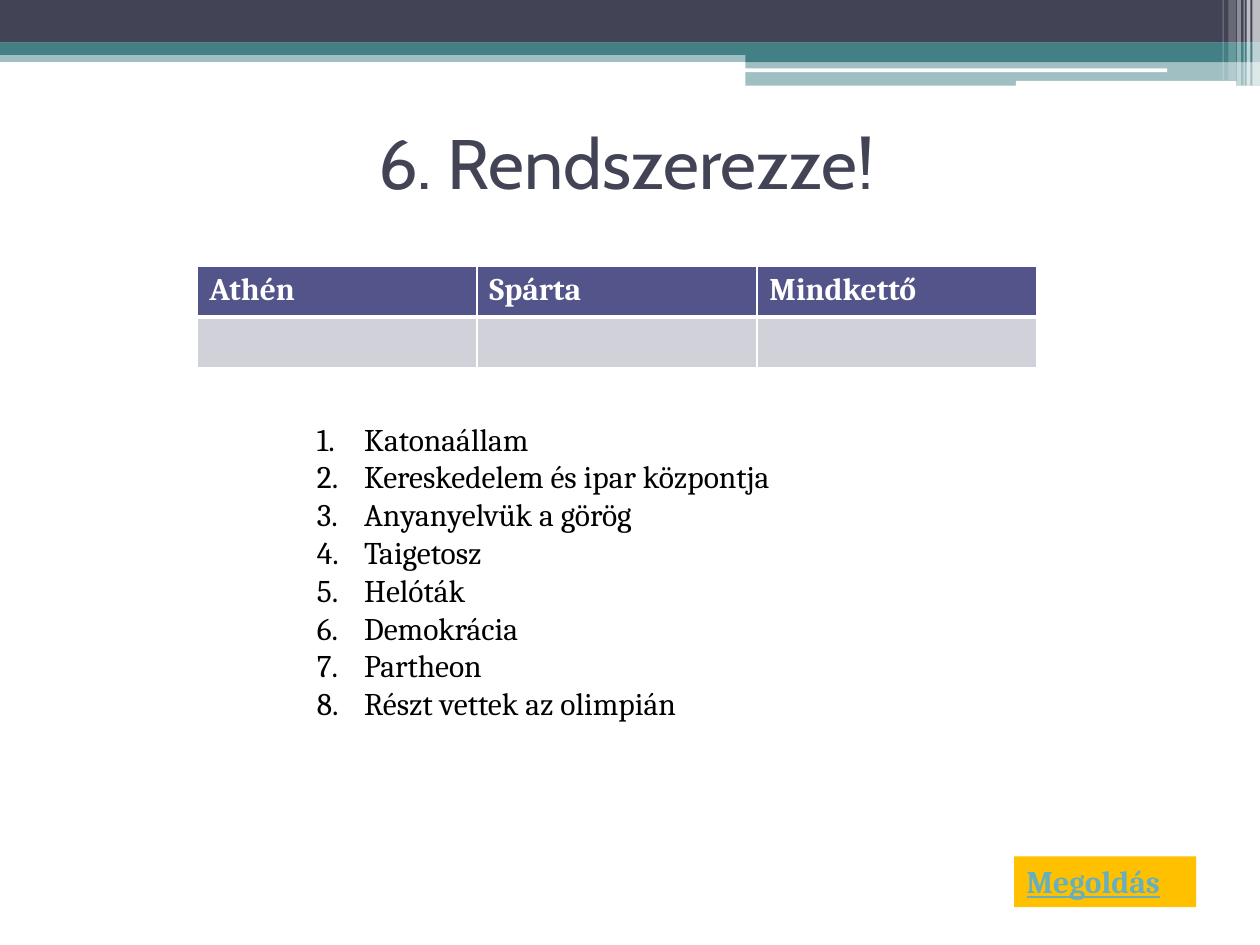
from typing import NamedTuple, Optional

from lxml import etree
from pptx import Presentation
from pptx import util as u
from pptx.dml.color import RGBColor
from pptx.enum import shapes, text
from pptx.oxml import ns

Pt = u.Pt

NAVY = RGBColor(0x42, 0x44, 0x56)
TEAL = RGBColor(0x43, 0x80, 0x86)
WHITE = RGBColor(0xFF, 0xFF, 0xFF)
BLACK = RGBColor(0, 0, 0)
GOLD = RGBColor(0xFF, 0xC0, 0x00)
LINK_BLUE = RGBColor(0x67, 0xAF, 0xBD)
HEADER_VIOLET = RGBColor(0x53, 0x54, 0x8A)
CELL_GREY = RGBColor(0xD1, 0xD1, 0xDA)

BODY_FONT = "Cambria"
TITLE_FONT = "Cabin"
RECTANGLE = shapes.MSO_SHAPE.RECTANGLE
ROUNDED = shapes.MSO_SHAPE.ROUNDED_RECTANGLE


class Band(NamedTuple):
    left: float
    top: float
    width: float
    height: float
    color: RGBColor
    opacity: int = 100
    kind: int = RECTANGLE


class Label(NamedTuple):
    left: float
    top: float
    width: float
    height: float
    lines: list[str]
    size: float
    color: RGBColor
    font: str = BODY_FONT
    bold: Optional[bool] = None
    underline: Optional[bool] = None
    fill: Optional[RGBColor] = None
    align: int = text.PP_ALIGN.LEFT
    anchor: int = text.MSO_ANCHOR.TOP
    number_indent: float = 0


BANDS = [
    Band(0, 28.8, 720, 6.6, TEAL, 50),
    Band(0, 0, 720, 24.4, NAVY),
    Band(0, 24.2, 720, 7.2, TEAL),
    Band(426, 28.3, 294, 7.2, TEAL),
    Band(426, 34.7, 294, 14.2, TEAL, 50),
    Band(425.8, 39.1, 241.2, 2.2, WHITE, kind=ROUNDED),
    Band(580.5, 46.2, 126, 2.9, WHITE, kind=ROUNDED),
    # Vertical stripes at the right edge
    Band(715.6, 0, 4.4, 49, WHITE, 65),
    Band(712.4, 0, 2.1, 49, WHITE, 65),
    Band(710.6, 0, 0.7, 49, WHITE, 60),
    Band(707, 0, 2.1, 49, WHITE, 40),
    Band(702, 0, 4.3, 46, WHITE, 20),
    Band(698.6, 0, 0.7, 46, WHITE, 30),
]

STATEMENTS = [
    "Katonaállam", "Kereskedelem és ipar központja", "Anyanyelvük a görög",
    "Taigetosz", "Helóták", "Demokrácia", "Partheon", "Részt vettek az olimpián",
]

LABELS = [
    Label(34, 50.4, 648, 84.2, ["6. Rendszerezze!"], 40, NAVY, TITLE_FONT,
          align=text.PP_ALIGN.CENTER, anchor=text.MSO_ANCHOR.MIDDLE),
    Label(579.5, 489.3, 104, 29.1, ["Megoldás"], 18, LINK_BLUE,
          bold=True, underline=True, fill=GOLD),
    Label(174, 236.2, 326, 181.4, STATEMENTS, 18, BLACK, number_indent=27),
]

COLUMN_HEADS = ["Athén", "Spárta", "Mindkettő"]


def add_band(slide, band: Band) -> None:
    shape = slide.shapes.add_shape(
        band.kind, Pt(band.left), Pt(band.top), Pt(band.width), Pt(band.height))
    shape.shadow.inherit = False
    shape.fill.solid()
    shape.fill.fore_color.rgb = band.color
    shape.line.fill.background()
    if band.opacity < 100:
        color = shape.fill._xPr.find(".//" + ns.qn("a:srgbClr"))
        etree.SubElement(color, ns.qn("a:alpha"), val=str(band.opacity * 1000))


def add_label(slide, label: Label) -> None:
    shape = slide.shapes.add_textbox(
        Pt(label.left), Pt(label.top), Pt(label.width), Pt(label.height))
    if label.fill is not None:
        shape.fill.solid()
        shape.fill.fore_color.rgb = label.fill
    frame = shape.text_frame
    frame.word_wrap = True
    frame.vertical_anchor = label.anchor
    frame.text = "\n".join(label.lines)
    for paragraph in frame.paragraphs:
        paragraph.alignment = label.align
        font = paragraph.font
        font.name, font.size = label.font, Pt(label.size)
        font.bold, font.underline = label.bold, label.underline
        font.color.rgb = label.color
        if label.number_indent:
            add_number(paragraph, label.number_indent)


def add_number(paragraph, indent: float) -> None:
    properties = paragraph._p.get_or_add_pPr()
    properties.set("marL", str(Pt(indent)))
    properties.set("indent", str(-Pt(indent)))
    numbering = etree.Element(ns.qn("a:buAutoNum"), type="arabicPeriod")
    properties.insert(0, numbering)


def add_borders(cell, widths: dict[str, float]) -> None:
    properties = cell._tc.get_or_add_tcPr()
    for position, (side, width) in enumerate(widths.items()):
        line = etree.Element(ns.qn("a:" + side), w=str(Pt(width)))
        fill = etree.SubElement(line, ns.qn("a:solidFill"))
        etree.SubElement(fill, ns.qn("a:srgbClr"), val=str(WHITE))
        properties.insert(position, line)


def add_sorting_table(slide) -> None:
    table = slide.shapes.add_table(
        2, len(COLUMN_HEADS), Pt(112.5), Pt(152), Pt(480), Pt(58.4)).table
    for row, (color, inner) in enumerate([(HEADER_VIOLET, "lnB"), (CELL_GREY, "lnT")]):
        for column, head in enumerate(COLUMN_HEADS):
            cell = table.cell(row, column)
            cell.fill.solid()
            cell.fill.fore_color.rgb = color
            add_borders(cell, {side: 3 if side == inner else 1
                               for side in ("lnL", "lnR", "lnT", "lnB")})
            if row == 0:
                cell.text = head
            font = cell.text_frame.paragraphs[0].font
            font.name, font.size, font.bold = BODY_FONT, Pt(18), row == 0
            font.color.rgb = WHITE if row == 0 else BLACK


def main() -> None:
    presentation = Presentation()
    presentation.slide_width, presentation.slide_height = Pt(720), Pt(540)
    slide = presentation.slides.add_slide(presentation.slide_layouts[6])

    # Header decoration
    for band in BANDS:
        add_band(slide, band)

    # Title, answer button and numbered statements
    for label in LABELS:
        add_label(slide, label)

    # Table to fill in
    add_sorting_table(slide)
    presentation.save("out.pptx")


if __name__ == "__main__":
    main()
